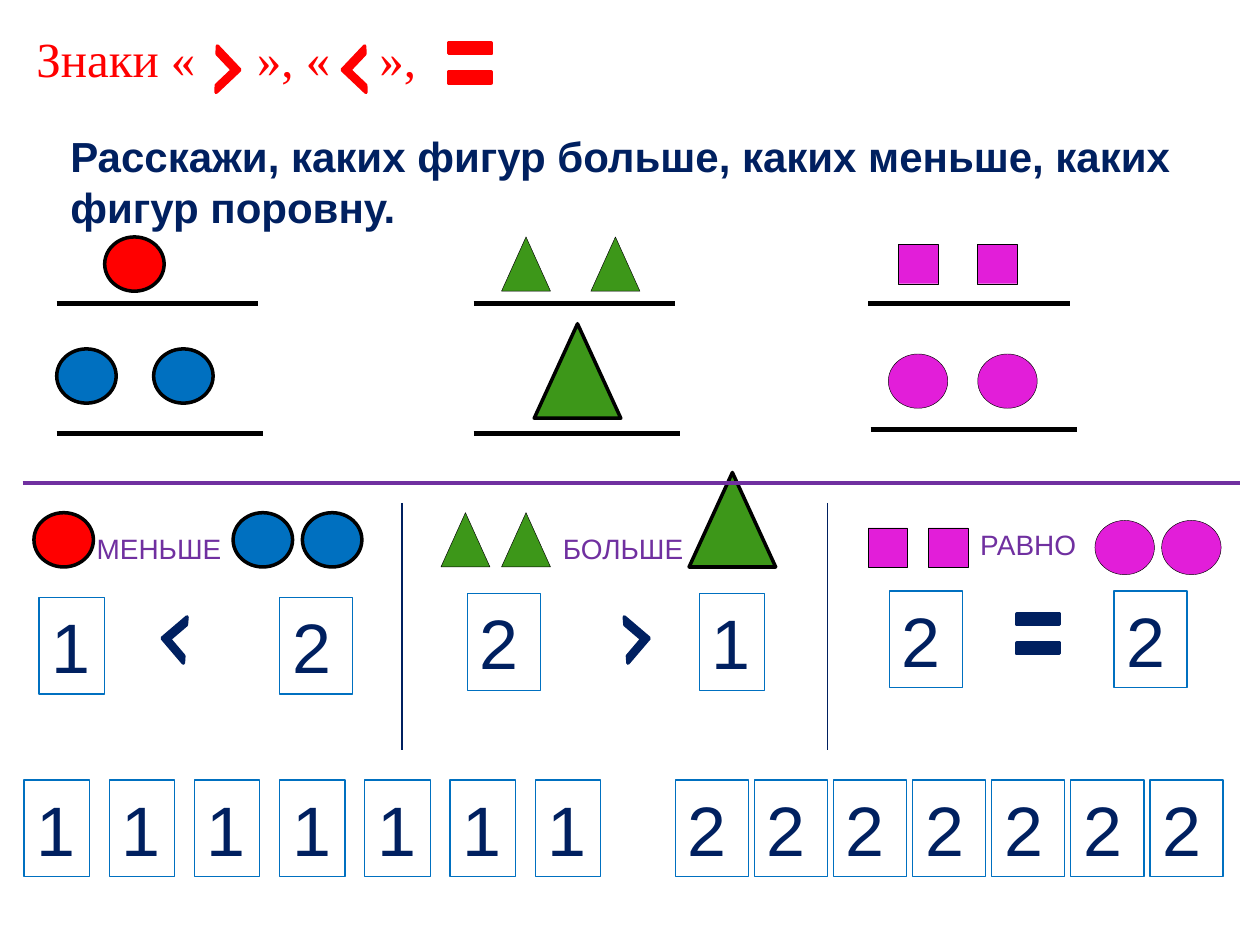
from dataclasses import dataclass

from lxml.etree import SubElement
from pptx import Presentation
from pptx.dml.color import RGBColor as Color
from pptx.enum.shapes import MSO_CONNECTOR as Connector, MSO_SHAPE as Kind
from pptx.enum.text import MSO_ANCHOR as Anchor, MSO_AUTO_SIZE as AutoSize, PP_ALIGN as Align
from pptx.oxml.ns import qn
from pptx.util import Pt


@dataclass(frozen=True)
class Theme:
    black: str = "000000"
    red: str = "FF0000"
    blue: str = "0070C0"
    green: str = "3D9719"
    pink: str = "E21ED9"
    navy: str = "002060"
    purple: str = "7030A0"
    font: str = "Arial"
    title_font: str = "Times New Roman"
    title_size: float = 28
    task_size: float = 24
    word_size: float = 16
    digit_size: float = 40
    thin: float = 0.25
    card_line: float = 0.75
    bold_line: float = 2
    divider_line: float = 2.25
    shelf_line: float = 3


class SlideBuilder:
    circle_size = (34, 31)
    triangle_size = (28, 31)
    big_triangle_size = (49.5, 54)
    square_size = (22.5, 22.5)
    card_widths = {"1": 37.4, "2": 41.8}
    card_height = 55.4

    def __init__(self, slide, theme):
        self.slide = slide
        self.theme = theme

    def figure(self, kind, left, top, size, fill, line, weight):
        shape = self.slide.shapes.add_shape(kind, Pt(left), Pt(top), *map(Pt, size))
        shape.shadow.inherit = False
        if fill:
            shape.fill.solid()
            shape.fill.fore_color.rgb = Color.from_string(fill)
        else:
            shape.fill.background()
        shape.line.color.rgb = Color.from_string(line)
        shape.line.width = Pt(weight)
        return shape

    def figures(self, kind, lefts, top, size, fill, weight):
        for left in lefts:
            self.figure(kind, left, top, size, fill, self.theme.black, weight)

    def circles(self, lefts, top, fill, weight):
        self.figures(Kind.OVAL, lefts, top, self.circle_size, fill, weight)

    def triangles(self, lefts, top):
        self.figures(Kind.ISOSCELES_TRIANGLE, lefts, top, self.triangle_size,
                     self.theme.green, self.theme.thin)

    def big_triangle(self, left, top):
        self.figures(Kind.ISOSCELES_TRIANGLE, [left], top, self.big_triangle_size,
                     self.theme.green, self.theme.bold_line)

    def squares(self, lefts, top):
        self.figures(Kind.RECTANGLE, lefts, top, self.square_size,
                     self.theme.pink, self.theme.thin)

    def line(self, start, end, color, weight):
        connector = self.slide.shapes.add_connector(
            Connector.STRAIGHT, *map(Pt, (*start, *end)))
        connector.line.color.rgb = Color.from_string(color)
        connector.line.width = Pt(weight)
        SubElement(connector._element.spPr, qn("a:effectLst"))

    def shelf(self, left, right, top):
        self.line((left, top), (right, top), self.theme.black, self.theme.shelf_line)

    def fill_text(self, shape, text, size, color, font=None, bold=False, tabs=()):
        frame = shape.text_frame
        frame.word_wrap = True
        frame.auto_size = AutoSize.SHAPE_TO_FIT_TEXT
        frame.vertical_anchor = Anchor.TOP
        paragraph = frame.paragraphs[0]
        paragraph.alignment = Align.LEFT
        if tabs:
            tab_list = SubElement(paragraph._p.get_or_add_pPr(), qn("a:tabLst"))
            for position in tabs:
                SubElement(tab_list, qn("a:tab"), pos=str(Pt(position)), algn="l")
        run = paragraph.add_run()
        run.text = text
        run.font.name = font or self.theme.font
        run.font.size = Pt(size)
        run.font.bold = bold
        run.font.color.rgb = Color.from_string(color)

    def text(self, box, text, size, color, **style):
        shape = self.slide.shapes.add_textbox(*map(Pt, box))
        self.fill_text(shape, text, size, color, **style)

    def word(self, left, top, width, text):
        self.text((left, top, width, 26.6), text, self.theme.word_size, self.theme.purple)

    def card(self, digit, left, top):
        size = (self.card_widths[digit], self.card_height)
        shape = self.figure(Kind.RECTANGLE, left, top, size, None,
                            self.theme.blue, self.theme.card_line)
        self.fill_text(shape, digit, self.theme.digit_size, self.theme.navy)

    def angle_sign(self, left, top, color, tilt, greater=False):
        shape = self.figure(Kind.HALF_FRAME, left, top, (18.7, 18.7), color, color,
                            self.theme.bold_line)
        shape.adjustments[0] = 0.171
        shape.adjustments[1] = 0.155
        shape.rotation = tilt if greater else 360 - tilt
        if greater:
            shape._element.spPr.find(qn("a:xfrm")).set("flipH", "1")

    def equal_sign(self, left, top, color):
        shape = self.figure(Kind.MATH_EQUAL, left, top, (33.1, 72), color, color,
                            self.theme.bold_line)
        shape.adjustments[0] = 0.085
        shape.adjustments[1] = 0.146


def add_heading(builder, theme):
    builder.text((13.7, 13, 382.3, 41), "Знаки «\t», «\t»,", theme.title_size, theme.red,
                 font=theme.title_font, tabs=(126, 196))
    builder.angle_sign(114.5, 30.2, theme.red, 46.6, greater=True)
    builder.angle_sign(199.4, 30.2, theme.red, 46.6)
    builder.equal_sign(252, 0, theme.red)
    builder.text((33.1, 71.3, 684, 65.5),
                 "Расскажи, каких фигур больше, каких меньше, каких фигур поровну.",
                 theme.task_size, theme.navy, bold=True)


def add_shelves(builder, theme):
    builder.circles([59.8], 135.4, theme.red, theme.bold_line)
    builder.circles([32.4, 87.8], 199.4, theme.blue, theme.bold_line)
    builder.triangles([286.6, 337.7], 135.4)
    builder.big_triangle(305.3, 185)
    builder.squares([513.4, 558.7], 139.7)
    builder.circles([507.6, 558.7], 202.3, theme.pink, theme.thin)
    for left in (32.4, 270.7, 496.1):
        builder.shelf(left, left + 115.2, 173.5)
    for left, top in ((32.4, 247.7), (270.7, 247.7), (497.5, 245.5)):
        builder.shelf(left, left + 117.8, top)


def add_comparisons(builder, theme):
    builder.circles([19.4], 293, theme.red, theme.bold_line)
    builder.circles([133.2, 172.8], 293, theme.blue, theme.bold_line)
    builder.word(48.2, 300.2, 99.4, "МЕНЬШЕ")
    builder.angle_sign(96.5, 356.4, theme.navy, 40.4)

    builder.triangles([252, 286.6], 293)
    builder.big_triangle(393.8, 270)
    builder.word(314.6, 300.2, 113.8, "БОЛЬШЕ")
    builder.angle_sign(348.5, 356.4, theme.navy, 40.4, greater=True)

    builder.squares([496.1, 530.6], 301.7)
    builder.circles([625.7, 663.8], 297.4, theme.pink, theme.thin)
    builder.word(553, 298.1, 78.5, "РАВНО")
    builder.equal_sign(576.7, 326.2, theme.navy)

    for digit, left, top in (("1", 22.3, 341.3), ("2", 159.8, 341.3),
                             ("2", 267.1, 339.1), ("1", 399.6, 339.1),
                             ("2", 508.3, 337.7), ("2", 636.5, 337.7)):
        builder.card(digit, left, top)
    for left in (229.7, 473):
        builder.line((left, 287.3), (left, 428.4), theme.navy, theme.card_line)
    builder.line((13, 275.8), (708.5, 275.8), theme.purple, theme.divider_line)


def add_card_rows(builder):
    for digit, start, step in (("1", 13.7, 48.7), ("2", 385.9, 45.2)):
        for index in range(7):
            builder.card(digit, start + index * step, 445.7)


def main():
    presentation = Presentation()
    presentation.slide_width = Pt(720)
    presentation.slide_height = Pt(540)
    slide = presentation.slides.add_slide(presentation.slide_layouts[6])
    theme = Theme()
    builder = SlideBuilder(slide, theme)
    add_heading(builder, theme)
    add_shelves(builder, theme)
    add_comparisons(builder, theme)
    add_card_rows(builder)
    presentation.save("out.pptx")


if __name__ == "__main__":
    main()
